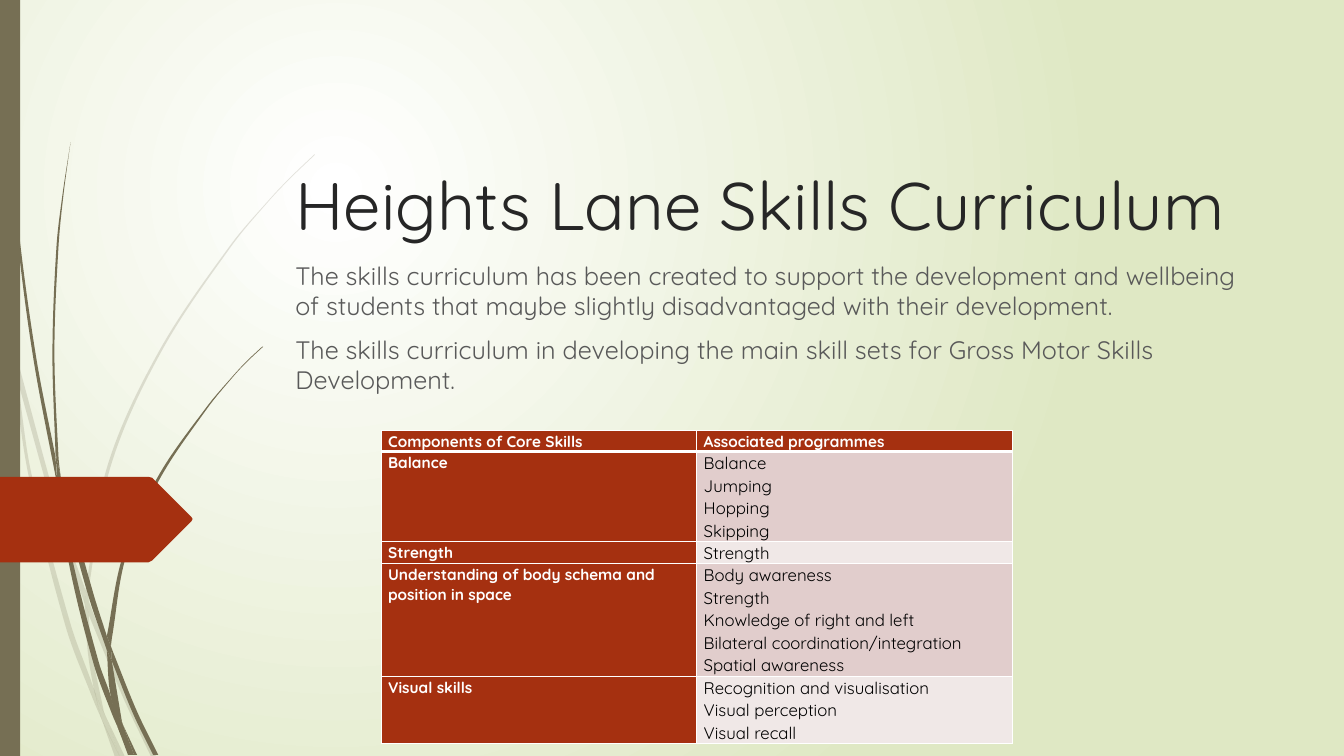
import math

from lxml import etree
from pptx import Presentation, util as u
from pptx.dml.color import RGBColor
from pptx.enum import shapes, text
from pptx.oxml import ns, parse_xml

FONT = "Quicksand"
HUES = {
    "stem": "766F54", "accent": "A53010", "white": "FFFFFF", "edge": "DFE8C4",
    "title": "262626", "body": "595959", "black": "000000",
    "odd": "E1CDCC", "even": "F0E8E7",
}
PALE = [
    ([(.11, 3.5), (.09, 3.22), (0, 2.82)], [(0, 2.99), (.1, 3.44)]),
    ([(.14, 3.45), (.62, 5.2), (.85, 5.86)], [(.84, 5.99), (.58, 5.22), (.17, 3.76)]),
    ([(.88, 5.96), (.92, 6.07), (1.27, 6.92), (1.55, 7.51)],
     [(1.5, 7.51), (1.23, 6.94), (.88, 6.1)]),
    ([(1.05, 7.11), (1.24, 7.51)], [(1.19, 7.51)]),
    ([(.11, 3.5), (.17, 3.76), (.31, 4.69), (.7, 6.19), (.93, 6.83), (.99, 7.07)],
     [(1.01, 7.14), (.92, 6.93), (.65, 6.21), (.28, 4.7), (.11, 3.5)]),
    ([(.84, 5.99), (.87, 6.46), (.93, 6.83), (.96, 6.92), (1.05, 7.11)],
     [(1.03, 7.06), (.91, 6.46), (.88, 6.1), (.88, 6.08)]),
    ([(.88, 5.96), (.88, 5.84), (1.1, 4.62), (1.6, 3.49), (2.29, 2.45), (2.68, 1.98),
      (2.9, 1.75), (3.12, 1.54)],
     [(3.12, 1.53), (2.89, 1.75), (2.68, 1.97), (2.28, 2.44), (1.58, 3.48), (1.07, 4.61),
      (.85, 5.84), (.85, 5.86)]),
    ([(1.01, 7.14), (1.14, 7.51)], [(1.19, 7.51)]),
    ([(.88, 6.08), (.88, 5.96)], [(.85, 5.86), (.84, 5.99)]),
    ([(.93, 6.83), (.99, 7.07), (1.01, 7.14), (1.19, 7.51)], [(1.05, 7.11), (.96, 6.92)]),
]
DARK = [
    ([(.04, 0), (.05, .48), (.08, 1.09), (.19, 2.32), (.36, 3.55), (.55, 4.53)],
     [(.57, 4.81), (.56, 4.77), (.33, 3.55), (.17, 2.33), (.07, 1.1), (.04, .48), (.03, 0)]),
    ([(.6, 4.72), (.93, 5.9), (1.06, 6.31)], [(1.06, 6.45), (.88, 5.92), (.64, 5.05)]),
    ([(1.1, 6.41), (1.13, 6.49), (1.36, 7.06), (1.57, 7.49)],
     [(1.52, 7.49), (1.32, 7.08), (1.11, 6.56)]),
    ([(.57, 4.77), (.64, 5.05), (.72, 5.56), (.98, 6.57), (1.1, 6.91), (1.16, 7.17)],
     [(1.17, 7.22), (1.11, 7.08), (.93, 6.59), (.68, 5.57), (.57, 4.77)]),
    ([(.6, 4.72), (.58, 4.53), (.54, 3.49), (.58, 2.45), (.63, 1.93), (.7, 1.41)],
     [(.7, 1.41), (.62, 1.93), (.56, 2.45), (.52, 3.49), (.55, 4.49)]),
    ([(1.22, 7.19), (1.36, 7.49)], [(1.33, 7.49)]),
    ([(.57, 4.77), (.64, 5.05)], [(.6, 4.72), (.55, 4.49)]),
    ([(1.11, 6.33), (1.25, 5.52), (1.58, 4.76), (2.05, 4.06), (2.31, 3.74), (2.45, 3.59),
      (2.61, 3.44)],
     [(2.6, 3.44), (2.45, 3.58), (2.31, 3.73), (2.04, 4.05), (1.56, 4.74), (1.22, 5.51),
      (1.06, 6.31)], [(1.1, 6.41)]),
    ([(1.17, 7.22), (1.27, 7.49)], [(1.31, 7.49)]),
    ([(1.06, 6.45), (1.1, 6.91), (1.22, 7.19)], [(1.21, 7.16), (1.11, 6.56)]),
    ([(1.06, 6.31), (1.06, 6.45)], [(1.11, 6.56), (1.1, 6.41)]),
    ([(1.1, 6.91), (1.17, 7.22), (1.3, 7.49)], [(1.33, 7.49), (1.22, 7.19)]),
]
ARROW = [[(0, 4.73), (1.47, 4.73)], [(1.51, 4.74)], [(1.9, 5.13), (1.91, 5.15), (1.9, 5.17)],
         [(1.51, 5.56)], [(1.47, 5.58), (0, 5.58)]]
TITLE = "Heights Lane Skills Curriculum"
INTRO = [
    "The skills curriculum has been created to support the development and wellbeing "
    "of students that maybe slightly disadvantaged with their development.",
    "The skills curriculum in developing the main skill sets for Gross Motor Skills Development.",
]
ROWS = [
    (.21, "Components of Core Skills", ["Associated programmes"]),
    (.89, "Balance", ["Balance", "Jumping", "Hopping", "Skipping"]),
    (.22, "Strength", ["Strength"]),
    (1.12, "Understanding of body schema and position in space",
     ["Body awareness", "Strength", "Knowledge of right and left",
      "Bilateral coordination/integration", "Spatial awareness"]),
    (.67, "Visual skills",
     ["Recognition and visualisation", "Visual perception", "Visual recall"]),
]


def tint(name):
    return RGBColor.from_string(HUES[name])


def write(frame, lines, size, hue, bold=False):
    frame.text = "\n".join(lines)
    for para in frame.paragraphs:
        font = para.font
        font.name, font.size, font.bold = FONT, u.Pt(size), bold
        font.color.rgb = tint(hue)


def paint(shape, hue, alpha=100):
    shape.shadow.inherit = False
    shape.fill.solid()
    shape.fill.fore_color.rgb = tint(hue)
    shape.line.fill.background()
    if alpha < 100:
        color = shape._element.spPr.find(".//" + ns.qn("a:srgbClr"))
        etree.SubElement(color, ns.qn("a:alpha")).set("val", str(alpha * 1000))


def handle(base, ahead, behind, reach):
    span = math.dist(ahead, behind) or 1
    return tuple(b + (p - q) / span * reach for b, p, q in zip(base, ahead, behind))


def curves(edge):
    ends = [edge[0], *edge, edge[-1]]
    bends = [None]
    for a, b, c, d in zip(ends, ends[1:], ends[2:], ends[3:]):
        reach = math.dist(b, c) / 3
        bends.append((handle(b, c, a, reach), handle(c, b, d, reach)))
    return bends


def outline(slide, edges, hue, alpha=100):
    spots = [(u.Inches(x), u.Inches(y)) for edge in edges for x, y in edge]
    pen = slide.shapes.build_freeform(*spots[0])
    pen.add_line_segments(spots[1:], close=True)
    shape = pen.convert_to_shape()
    paint(shape, hue, alpha)
    bends = [bend for edge in edges for bend in curves(edge)][1:]
    for line, bend in zip(list(shape._element.iter(ns.qn("a:lnTo"))), bends):
        if bend:
            line.tag = ns.qn("a:cubicBezTo")
            for i, (x, y) in enumerate(bend):
                point = etree.Element(ns.qn("a:pt"))
                point.set("x", str(u.Inches(x) - shape.left))
                point.set("y", str(u.Inches(y) - shape.top))
                line.insert(i, point)


def backdrop(slide):
    fill = slide.background.fill
    fill.gradient()
    for stop, hue in zip(fill.gradient_stops, ("white", "edge")):
        stop.color.rgb = tint(hue)
    line = slide._element.find(".//" + ns.qn("a:lin"))
    line.getparent().replace(line, parse_xml(
        f'<a:path {ns.nsdecls("a")} path="circle">'
        '<a:fillToRect l="50000" t="50000" r="100000" b="100000"/></a:path>'))


def border(cell, top, base):
    props = cell._tc.get_or_add_tcPr()
    for side, width in (("L", 1), ("R", 1), ("T", top), ("B", base)):
        props.append(parse_xml(
            f'<a:ln{side} {ns.nsdecls("a")} w="{u.Pt(width)}"><a:solidFill>'
            f'<a:srgbClr val="{HUES["white"]}"/></a:solidFill></a:ln{side}>'))


def fill_cell(cell, lines, row, head):
    border(cell, 3 if row == 1 else 1, 3 if row == 0 else 1)
    cell.fill.solid()
    cell.fill.fore_color.rgb = tint("accent" if head else "odd" if row % 2 else "even")
    cell.margin_left = cell.margin_right = u.Inches(.07)
    cell.margin_top = cell.margin_bottom = 0
    write(cell.text_frame, lines, 11 if head else 12, "white" if head else "black", head)
    for para in cell.text_frame.paragraphs:
        para.line_spacing = 1.07


def skills(slide):
    high = sum(row[0] for row in ROWS)
    table = slide.shapes.add_table(len(ROWS), 2, u.Inches(3.78), u.Inches(4.27),
                                   u.Inches(6.26), u.Inches(high)).table
    for i, (height, name, items) in enumerate(ROWS):
        table.rows[i].height = u.Inches(height)
        fill_cell(table.cell(i, 0), [name], i, True)
        fill_cell(table.cell(i, 1), items, i, i == 0)


def heading(slide):
    title = slide.shapes.title
    title.left, title.top = u.Inches(2.83), u.Inches(0)
    title.width, title.height = u.Inches(9.75), u.Inches(2.47)
    frame = title.text_frame
    write(frame, [TITLE], 48, "title")
    frame.auto_size = text.MSO_AUTO_SIZE.NONE
    frame.vertical_anchor = text.MSO_ANCHOR.BOTTOM
    frame.paragraphs[0].alignment = text.PP_ALIGN.LEFT


def intro(slide):
    box = slide.shapes.add_textbox(u.Inches(2.83), u.Inches(2.53), u.Inches(9.75), u.Inches(3.49))
    box.text_frame.word_wrap = True
    write(box.text_frame, INTRO, 18, "body")
    for para in box.text_frame.paragraphs:
        para.space_before = u.Pt(10)


def main():
    deck = Presentation()
    deck.slide_width, deck.slide_height = u.Inches(13.33), u.Inches(7.5)
    slide = deck.slides.add_slide(deck.slide_layouts[5])
    backdrop(slide)
    for blades, alpha in ((PALE, 20), (DARK, 100)):
        for edges in blades:
            outline(slide, edges, "stem", alpha)
    band = slide.shapes.add_shape(shapes.MSO_SHAPE.RECTANGLE, 0, 0, u.Inches(.2), u.Inches(7.5))
    paint(band, "stem")
    outline(slide, ARROW, "accent")
    heading(slide)
    intro(slide)
    skills(slide)
    deck.save("out.pptx")


if __name__ == "__main__":
    main()
